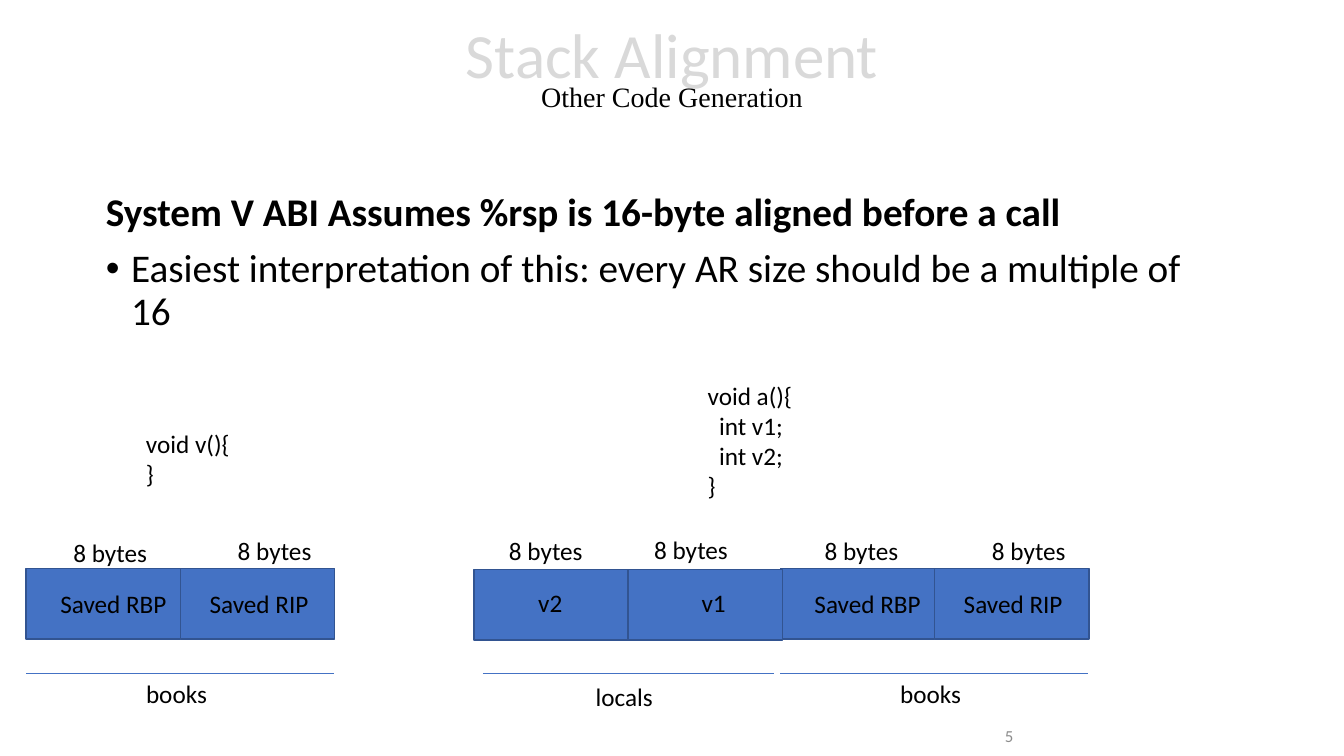
from lxml.etree import SubElement
from pptx import Presentation
from pptx.dml.color import RGBColor
from pptx.enum.shapes import MSO_CONNECTOR as Connector, MSO_SHAPE as Shape
from pptx.enum.text import MSO_ANCHOR as Anchor, MSO_AUTO_SIZE as AutoSize, PP_ALIGN as Align
from pptx.oxml.ns import qn
from pptx.util import Pt

PX = 9144  # EMU, 100 px to the inch

BLACK = RGBColor(0x00, 0x00, 0x00)
PALE = RGBColor(0xD9, 0xD9, 0xD9)
GRAY = RGBColor(0x8C, 0x8C, 0x8C)
BLUE = RGBColor(0x44, 0x72, 0xC4)
NAVY = RGBColor(0x32, 0x54, 0x91)

TITLE = "Stack Alignment"
SUBTITLE = "Other Code Generation"
HEADING = "System V ABI Assumes %rsp is 16-byte aligned before a call"
BULLET = "Easiest interpretation of this: every AR size should be a multiple of 16"
PAGE_NUMBER = "5"

CELL_WIDTH, CELL_HEIGHT = 153, 70
RULE_TOP = 668

# Text, then left, top, width and height; lefts count from the left of the group
BOOKS_LABELS = [
    ("books", 109, 668, 81, 40),
    ("Saved RIP", 172, 579, 119, 40),
    ("Saved RBP", 24, 579, 127, 40),
    ("8 bytes", 200, 526, 94, 40),
]
LOCALS_LABELS = [
    ("locals", 111, 671, 77, 40),
    ("v1", 216, 578, 44, 40),
    ("v2", 54, 578, 44, 40),
    ("8 bytes", 169, 525, 94, 40),
    ("8 bytes", 25, 526, 94, 40),
]
# Left, top of cells, rule start and end, labels
GROUPS = [
    (26, 564, 26, 331, BOOKS_LABELS + [("8 bytes", 37, 528, 94, 40)]),
    (774, 564, 774, 1079, BOOKS_LABELS + [("8 bytes", 34, 526, 94, 40)]),
    (470, 565, 479, 768, LOCALS_LABELS),
]
CODE = [
    ("void v(){\n}", 135, 420, 104, 71),
    ("void a(){\n  int v1;\n  int v2;\n}", 692, 372, 105, 131),
]


def place(shape, *px):
    for name, value in zip(("left", "top", "width", "height"), px):
        setattr(shape, name, value * PX)


def style(font, color=BLACK, **values):
    for name, value in {"name": "Calibri", "size": Pt(18), **values}.items():
        setattr(font, name, value)
    font.color.rgb = color


def add_label(text, left, top, width, height):
    box = slide.shapes.add_textbox(*(n * PX for n in (left, top, width, height)))
    frame = box.text_frame
    frame.word_wrap = False
    frame.auto_size = AutoSize.SHAPE_TO_FIT_TEXT
    frame.text = text
    for para in frame.paragraphs:
        style(para.runs[0].font)
    return frame


def add_cell(left, top):
    cell = slide.shapes.add_shape(
        Shape.RECTANGLE, left * PX, top * PX, CELL_WIDTH * PX, CELL_HEIGHT * PX)
    cell.shadow.inherit = False
    cell.fill.solid()
    cell.fill.fore_color.rgb = BLUE
    cell.line.color.rgb = NAVY
    cell.line.width = Pt(1)


def add_rule(start, end):
    rule = slide.shapes.add_connector(
        Connector.STRAIGHT, start * PX, RULE_TOP * PX, end * PX, RULE_TOP * PX)
    rule.line.color.rgb = BLUE
    rule.line.width = Pt(0.5)
    SubElement(rule._element.spPr, qn("a:effectLst"))


def outline(span):
    """Give the letters of a run a black 1 pt outline."""
    properties = span._r.get_or_add_rPr()
    line = SubElement(properties, qn("a:ln"), w=str(Pt(1)))
    fill = SubElement(line, qn("a:solidFill"))
    SubElement(fill, qn("a:srgbClr"), val=str(BLACK))
    properties.insert(0, line)


def set_bullet(para, indent, tag, **attributes):
    properties = para._p.get_or_add_pPr()
    properties.set("marL", str(indent * PX))
    properties.set("indent", str(-indent * PX))
    SubElement(properties, qn(tag), **attributes)


deck = Presentation()
deck.slide_width, deck.slide_height = 1333 * PX, 750 * PX
slide = deck.slides.add_slide(deck.slide_layouts[1])

title, body = slide.placeholders
place(title, 0, 1, 1333, 145)
title.text_frame.auto_size = AutoSize.NONE
title.text_frame.vertical_anchor = Anchor.MIDDLE
para = title.text_frame.paragraphs[0]
para.alignment = Align.CENTER
para.line_spacing = 0.7
span = para.add_run()
span.text = TITLE
style(span.font, PALE, size=Pt(45))
outline(span)
para.add_line_break()
span = para.add_run()
span.text = SUBTITLE
style(span.font, name="Times New Roman", size=Pt(20))

place(body, 95, 186, 1088, 525)
body.text_frame.auto_size = AutoSize.NONE
body.text_frame.text = f"{HEADING}\n{BULLET}"
heading, bullet = body.text_frame.paragraphs
for para in (heading, bullet):
    para.line_spacing = 0.9
    para.space_before = Pt(10)
    style(para.runs[0].font, size=Pt(28), bold=para is heading)
set_bullet(heading, 0, "a:buNone")
set_bullet(bullet, 25, "a:buChar", char="•")

for left, top, rule_start, rule_end, labels in GROUPS:
    for column in range(2):
        add_cell(left + column * CELL_WIDTH, top)
    add_rule(rule_start, rule_end)
    for text, offset, *rest in labels:
        add_label(text, left + offset, *rest)

for snippet in CODE:
    add_label(*snippet)

number = add_label(PAGE_NUMBER, 790, 710, 225, 40)
number.word_wrap = True
number.auto_size = AutoSize.NONE
number.vertical_anchor = Anchor.MIDDLE
para = number.paragraphs[0]
para.alignment = Align.RIGHT
style(para.runs[0].font, GRAY, size=Pt(12))

deck.save("out.pptx")
